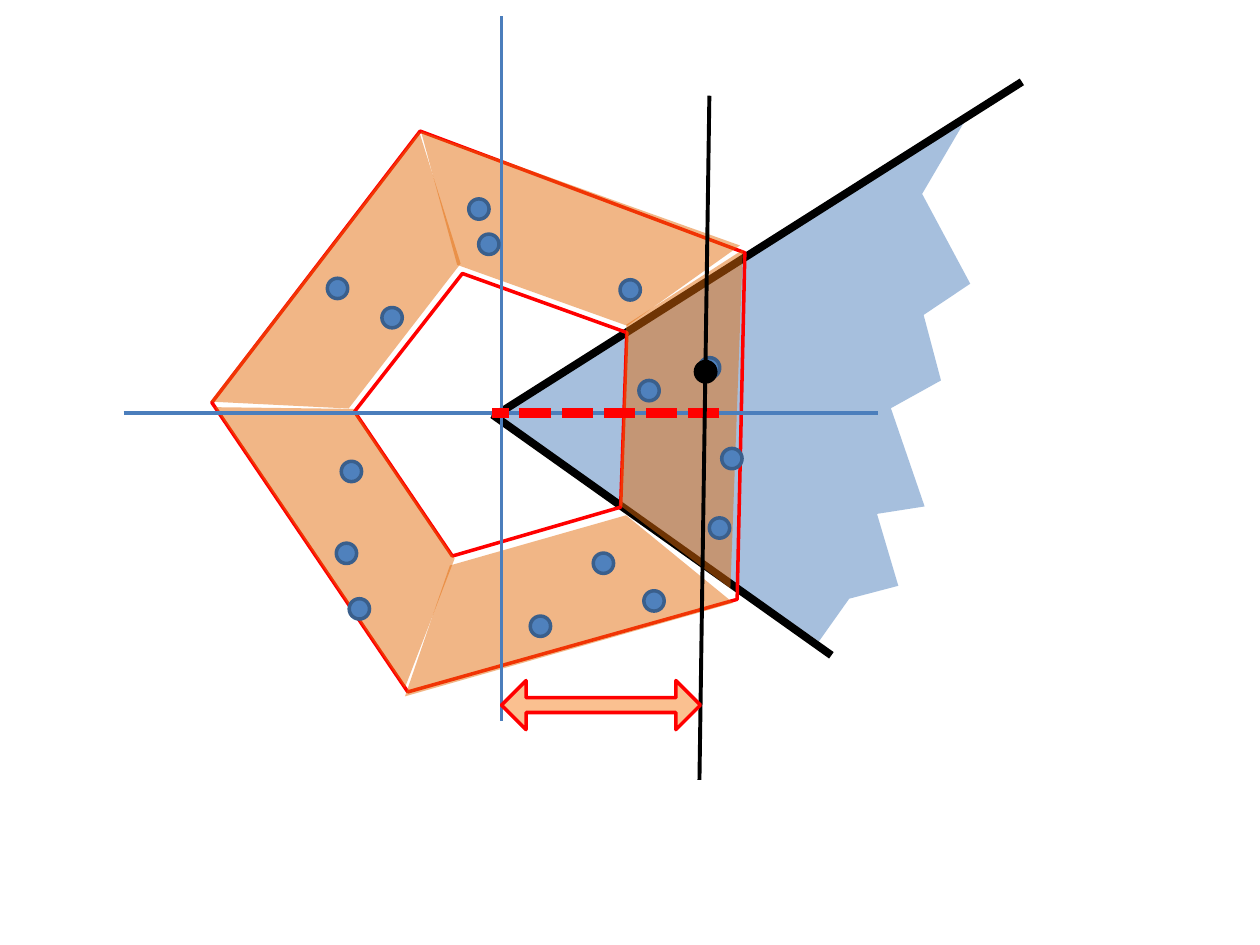
"""Build a slide of a dotted pentagonal ring crossed by a shaded sector and axes."""
from lxml.etree import SubElement
from pptx import Presentation
from pptx.dml.color import RGBColor
from pptx.enum.dml import MSO_LINE
from pptx.enum.shapes import MSO_CONNECTOR, MSO_SHAPE as Preset
from pptx.oxml.ns import qn
from pptx.util import Cm, Pt

BLUE, DOT_EDGE, AXIS_BLUE = "4F81BD", "3A5F8C", "4B7EBC"
ORANGE, PEACH, RED, BLACK = "E46C0A", "FAC090", "FF0000", "000000"

sector = [
    (9.93, 8.41), (19.48, 2.39), (18.59, 3.91), (19.56, 5.72),
    (18.62, 6.35), (18.97, 7.67), (17.96, 8.23), (18.64, 10.21),
    (17.68, 10.36), (18.11, 11.81), (17.12, 12.07), (16.51, 12.93),
]
sector_edges = [
    ((16.76, 13.21), (9.93, 8.36)),
    ((9.93, 8.41), (20.6, 1.65)),
]
ring_outlines = [(4.93, 2.77, 11.4, 10.59), (7.54, 5.51, 5.69, 5.44)]
ring_tilt = 55.9
panel_height = 2.29
panels = [
    (3.78, 9.25, 6.83, 55.9),
    (3.81, 4.93, 6.88, 127.7),
    (7.72, 10.85, 6.88, 344.1),
    (10.29, 7.26, 6.83, 272.1),
    (7.9, 3.73, 6.83, 199.7),
]
axes = [
    ((2.49, 8.33), (17.7, 8.33)),
    ((10.11, 14.12), (10.11, 0.33)),
    ((10.11, 14.53), (10.11, 0.71)),
]
dot_size = 0.41
dots = [
    (11.96, 11.15), (12.98, 11.91), (14.3, 10.44), (7.04, 12.07),
    (10.69, 12.42), (6.78, 10.95), (14.55, 9.04), (12.5, 5.64),
    (14.1, 7.21), (12.88, 7.67), (6.88, 9.3), (6.6, 5.61),
    (9.45, 4.01), (7.7, 6.2), (9.65, 4.72),
]
radius = ((14.5, 8.33), (9.91, 8.33))
projection = ((14.1, 15.72), (14.3, 1.93))
chosen_dot = (14.02, 7.29)
distance = (10.11, 13.72, 4.01, 0.99)


def rgb(code):
    return RGBColor.from_string(code)


def paint(shape, fill=None, opacity=None, edge=None):
    shape.shadow.inherit = False
    if fill:
        shape.fill.solid()
        shape.fill.fore_color.rgb = rgb(fill)
        if opacity:
            color = shape.fill._xPr.find(qn("a:solidFill"))[0]
            SubElement(color, qn("a:alpha"), val=str(opacity * 1000))
    else:
        shape.fill.background()
    if edge:
        shape.line.color.rgb = rgb(edge)
        shape.line.width = Pt(2)
    else:
        shape.line.fill.background()


def add_preset(preset, box, rotation=0, adjustments=(), **look):
    shape = slide.shapes.add_shape(preset, *map(Cm, box))
    shape.rotation = rotation
    for index, value in enumerate(adjustments):
        shape.adjustments[index] = value
    paint(shape, **look)


def add_line(ends, color, width, dash=None):
    start, end = ends
    line = slide.shapes.add_connector(MSO_CONNECTOR.STRAIGHT, *map(Cm, start + end))
    line.line.color.rgb = rgb(color)
    line.line.width = Pt(width)
    if dash:
        line.line.dash_style = dash
    SubElement(line._element.spPr, qn("a:effectLst"))


deck = Presentation()
deck.slide_width, deck.slide_height = Cm(25.4), Cm(19.05)
slide = deck.slides.add_slide(deck.slide_layouts[6])

corners = [(Cm(x), Cm(y)) for x, y in sector]
outline = slide.shapes.build_freeform(*corners[0])
outline.add_line_segments(corners[1:], close=True)
paint(outline.convert_to_shape(), fill=BLUE, opacity=50)
for edge in sector_edges:
    add_line(edge, BLACK, 4.5)

for box in ring_outlines:
    add_preset(Preset.REGULAR_PENTAGON, box, ring_tilt, edge=RED)
for left, top, width, tilt in panels:
    add_preset(Preset.TRAPEZOID, (left, top, width, panel_height), tilt, [0.696],
               fill=ORANGE, opacity=49)

for axis in axes:
    add_line(axis, AXIS_BLUE, 2.25)
for dot in dots:
    add_preset(Preset.OVAL, (*dot, dot_size, dot_size), fill=BLUE, edge=DOT_EDGE)

add_line(radius, RED, 6, MSO_LINE.SQUARE_DOT)
add_line(projection, BLACK, 2.25)
add_preset(Preset.OVAL, (*chosen_dot, dot_size, dot_size), fill=BLACK, edge=BLACK)
add_preset(Preset.LEFT_RIGHT_ARROW, distance, adjustments=[0.302, 0.5],
           fill=PEACH, edge=RED)

deck.save("out.pptx")
